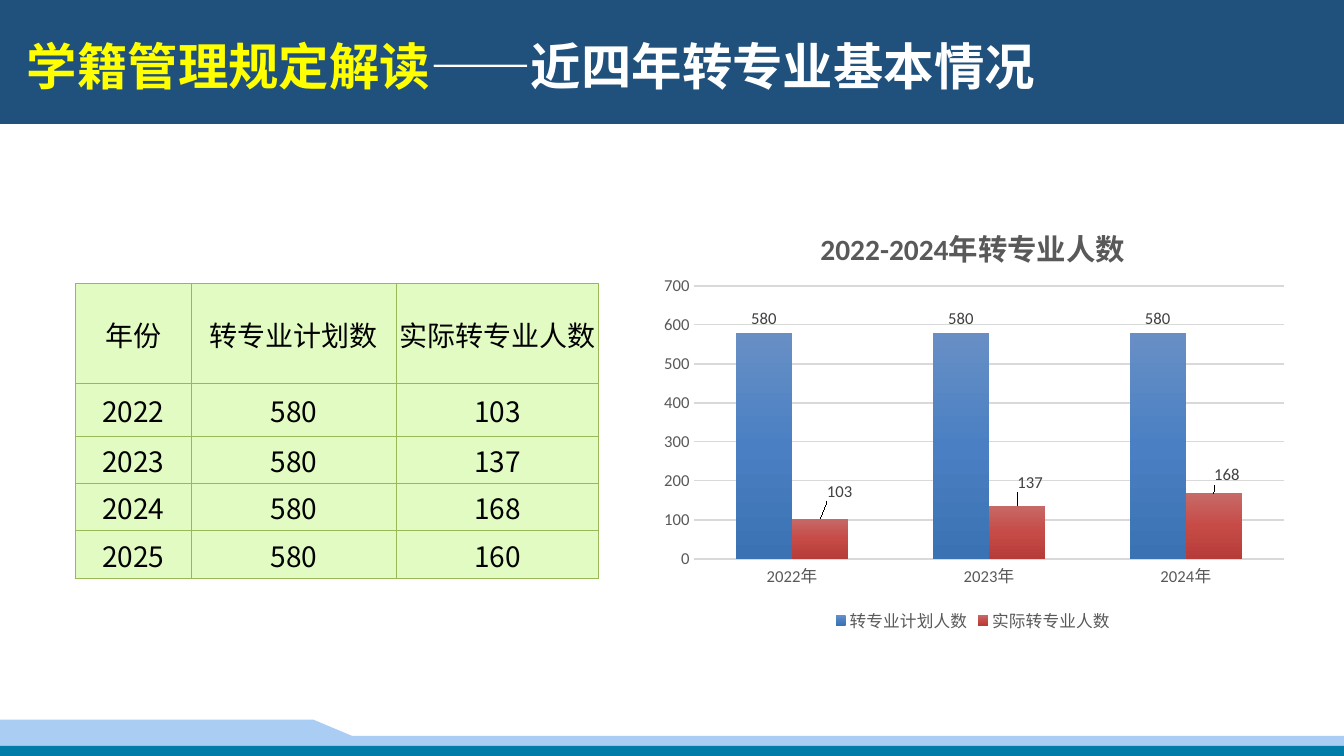
from copy import deepcopy
from dataclasses import dataclass

from lxml.etree import SubElement
from pptx import Presentation
from pptx.chart.data import CategoryChartData
from pptx.dml.color import RGBColor
from pptx.enum.chart import XL_CHART_TYPE as ChartType
from pptx.enum.chart import XL_LABEL_POSITION as LabelPosition
from pptx.enum.chart import XL_LEGEND_POSITION as LegendPosition
from pptx.enum.chart import XL_TICK_MARK as TickMark
from pptx.enum.shapes import MSO_SHAPE as Preset
from pptx.enum.text import MSO_ANCHOR as Anchor
from pptx.enum.text import MSO_AUTO_SIZE as AutoSize
from pptx.enum.text import PP_ALIGN as Align
from pptx.oxml.ns import qn
from pptx.oxml.xmlchemy import OxmlElement
from pptx.util import Pt

NAVY = RGBColor(0x20, 0x51, 0x7C)
SKY = RGBColor(0xAA, 0xCD, 0xF4)
TEAL = RGBColor(0x00, 0x7C, 0xA8)
YELLOW = RGBColor(0xFF, 0xFF, 0x00)
WHITE = RGBColor(0xFF, 0xFF, 0xFF)
BLACK = RGBColor(0x00, 0x00, 0x00)
PALE_GREEN = RGBColor(0xE2, 0xFB, 0xC3)
LEAF = RGBColor(0x98, 0xB9, 0x55)
GREY = RGBColor(0x59, 0x59, 0x59)
DARK_GREY = RGBColor(0x40, 0x40, 0x40)
GRID_GREY = RGBColor(0xD9, 0xD9, 0xD9)
BLUES = (RGBColor(0x68, 0x8F, 0xC5), RGBColor(0x4A, 0x80, 0xC3), RGBColor(0x3B, 0x72, 0xB3))
REDS = (RGBColor(0xC7, 0x69, 0x67), RGBColor(0xC6, 0x4B, 0x47), RGBColor(0xB6, 0x3C, 0x39))
CJK_FONT = "Noto Sans CJK SC"
CHART_FONT = "Calibri"


@dataclass(frozen=True)
class Bar:
    top: float
    height: float
    color: RGBColor


@dataclass(frozen=True)
class Headcount:
    name: str
    values: tuple[int, ...]
    gradient: tuple[RGBColor, ...]
    label_shifts: tuple[tuple[float, float], ...] = ()


BARS = (Bar(0, 88.5, NAVY), Bar(532.8, 7.2, TEAL))
RIDGE = ((0, 535.7), (960, 535), (960, 525.6), (251.3, 525.6), (223.9, 514.1), (0, 514.1))
COLUMN_WIDTHS = (83, 146.5, 144.5)
ROW_HEIGHTS = (71.5, 37.5, 33.8, 33.8, 33.8)
TRANSFERS = (
    ("年份", "转专业计划数", "实际转专业人数"),
    ("2022", "580", "103"),
    ("2023", "580", "137"),
    ("2024", "580", "168"),
    ("2025", "580", "160"),
)
HEADCOUNTS = (
    Headcount("转专业计划人数", (580, 580, 580), BLUES),
    Headcount("实际转专业人数", (103, 137, 168), REDS, ((0.03, -0.03), (0.02, -0.02), (0.02, -0.01))),
)


def style_font(font, size: float, color: RGBColor, name: str = CHART_FONT, bold: bool = False) -> None:
    font.size, font.name, font.bold = Pt(size), name, bold
    font.color.rgb = color


def add_cjk_run(paragraph, text: str, size: float, color: RGBColor, bold: bool = False) -> None:
    run = paragraph.add_run()
    run.text = text
    style_font(run.font, size, color, CJK_FONT, bold)
    SubElement(run.font._element, qn("a:ea"), typeface=CJK_FONT)


def paint(shape, color: RGBColor) -> None:
    shape.shadow.inherit = False
    shape.fill.solid()
    shape.fill.fore_color.rgb = color
    shape.line.fill.background()


def add_bar(slide, bar: Bar) -> None:
    paint(slide.shapes.add_shape(Preset.RECTANGLE, 0, Pt(bar.top), Pt(960), Pt(bar.height)), bar.color)


def add_decoration(slide) -> None:
    banner, footer = BARS
    add_bar(slide, banner)
    start, *rest = [(Pt(x), Pt(y)) for x, y in RIDGE]
    outline = slide.shapes.build_freeform(*start)
    outline.add_line_segments(rest, close=True)
    paint(outline.convert_to_shape(), SKY)
    add_bar(slide, footer)


def set_borders(cell) -> None:
    properties = cell._tc.get_or_add_tcPr()
    for side in ("lnL", "lnR", "lnT", "lnB"):
        line = SubElement(properties, qn(f"a:{side}"), w=str(Pt(0.75)))
        SubElement(SubElement(line, qn("a:solidFill")), qn("a:srgbClr"), val=str(LEAF))


def add_transfer_table(slide) -> None:
    table = slide.shapes.add_table(
        len(ROW_HEIGHTS), len(COLUMN_WIDTHS), Pt(53.7), Pt(202.5), Pt(sum(COLUMN_WIDTHS)), Pt(sum(ROW_HEIGHTS))
    ).table
    table.horz_banding = table.first_row = False
    for column, width in zip(table.columns, COLUMN_WIDTHS):
        column.width = Pt(width)
    for row, height, texts in zip(table.rows, ROW_HEIGHTS, TRANSFERS):
        row.height = Pt(height)
        for cell, text in zip(row.cells, texts):
            cell.margin_left = cell.margin_right = cell.margin_top = Pt(0.7)
            cell.margin_bottom = 0
            cell.vertical_anchor = Anchor.MIDDLE
            set_borders(cell)
            cell.fill.solid()
            cell.fill.fore_color.rgb = PALE_GREEN
            paragraph = cell.text_frame.paragraphs[0]
            paragraph.alignment = Align.CENTER
            add_cjk_run(paragraph, text, 20, BLACK)


def chart_layout(**settings: object):
    """Build a manual chart layout; settings follow schema order."""
    layout = OxmlElement("c:layout")
    manual = SubElement(layout, qn("c:manualLayout"))
    for tag, value in settings.items():
        SubElement(manual, qn(f"c:{tag}"), val=str(value))
    return layout


def style_series(series, headcount: Headcount) -> None:
    fill = series.format.fill
    fill.gradient()
    fill.gradient_angle = 270
    stops = next(series._element.iter(qn("a:gsLst")))
    stops.append(deepcopy(stops[0]))
    for stop, position, color in zip(fill.gradient_stops, (0, 0.5, 1), headcount.gradient):
        stop.position = position
        stop.color.rgb = color
    labels = series.data_labels
    labels.show_value = True
    labels.position = LabelPosition.OUTSIDE_END
    style_font(labels.font, 11.9, DARK_GREY)
    for index in range(len(headcount.label_shifts)):
        label = series.points[index].data_label
        style_font(label.font, 11.9, DARK_GREY)
        label.position = LabelPosition.OUTSIDE_END
    for label, (x, y) in zip(series._element.iter(qn("c:dLbl")), headcount.label_shifts):
        label.insert(1, chart_layout(x=x, y=y))


def add_headcount_chart(slide) -> None:
    data = CategoryChartData()
    data.categories = ["2022年", "2023年", "2024年"]
    for headcount in HEADCOUNTS:
        data.add_series(headcount.name, headcount.values)
    chart = slide.shapes.add_chart(
        ChartType.COLUMN_CLUSTERED, Pt(463), Pt(145.5), Pt(463.7), Pt(309.6), data
    ).chart
    style_font(chart.font, 10, BLACK)

    title = chart.chart_title.text_frame.paragraphs[0].add_run()
    title.text = "2022-2024年转专业人数"
    style_font(title.font, 21, GREY, bold=True)
    chart.chart_title.include_in_layout = False

    chart.has_legend = True
    chart.legend.position = LegendPosition.BOTTOM
    chart.legend.include_in_layout = False
    style_font(chart.legend.font, 11.9, GREY)

    for axis in (chart.category_axis, chart.value_axis):
        axis.major_tick_mark = axis.minor_tick_mark = TickMark.NONE
        style_font(axis.tick_labels.font, 11.9, GREY)
    chart.category_axis.format.line.color.rgb = GRID_GREY
    chart.category_axis.format.line.width = Pt(1)
    chart.value_axis.format.line.fill.background()
    chart.value_axis.minimum_scale, chart.value_axis.maximum_scale = 0, 700
    chart.value_axis.major_unit = 100
    grid = chart.value_axis.major_gridlines.format.line
    grid.color.rgb, grid.width = GRID_GREY, Pt(0.75)

    plot = chart.plots[0]
    plot.gap_width, plot.overlap, plot.vary_by_categories = 150, 0, False
    for series, headcount in zip(plot.series, HEADCOUNTS):
        style_series(series, headcount)

    plot_area = next(chart._chartSpace.iter(qn("c:plotArea")))
    for automatic in plot_area.findall(qn("c:layout")):
        plot_area.remove(automatic)
    plot_area.insert(0, chart_layout(
        layoutTarget="inner", xMode="edge", yMode="edge", x=0.07, y=0.19, w=0.91, h=0.63
    ))


def place_title(slide) -> None:
    """Format the title and bring it in front of the banner."""
    title = slide.shapes.title
    title.left, title.top, title.width, title.height = Pt(12), Pt(21), Pt(853), Pt(51)
    frame = title.text_frame
    frame.auto_size, frame.word_wrap, frame.vertical_anchor = AutoSize.NONE, True, Anchor.MIDDLE
    heading = frame.paragraphs[0]
    heading.alignment = Align.LEFT
    add_cjk_run(heading, "学籍管理规定解读", 36, YELLOW, bold=True)
    add_cjk_run(heading, "——近四年转专业基本情况", 36, WHITE, bold=True)
    slide.shapes._spTree.append(title._element)


def main() -> None:
    deck = Presentation()
    deck.slide_width, deck.slide_height = Pt(960), Pt(540)
    slide = deck.slides.add_slide(deck.slide_layouts[5])
    add_decoration(slide)
    add_transfer_table(slide)
    add_headcount_chart(slide)
    place_title(slide)
    deck.save("out.pptx")


if __name__ == "__main__":
    main()
